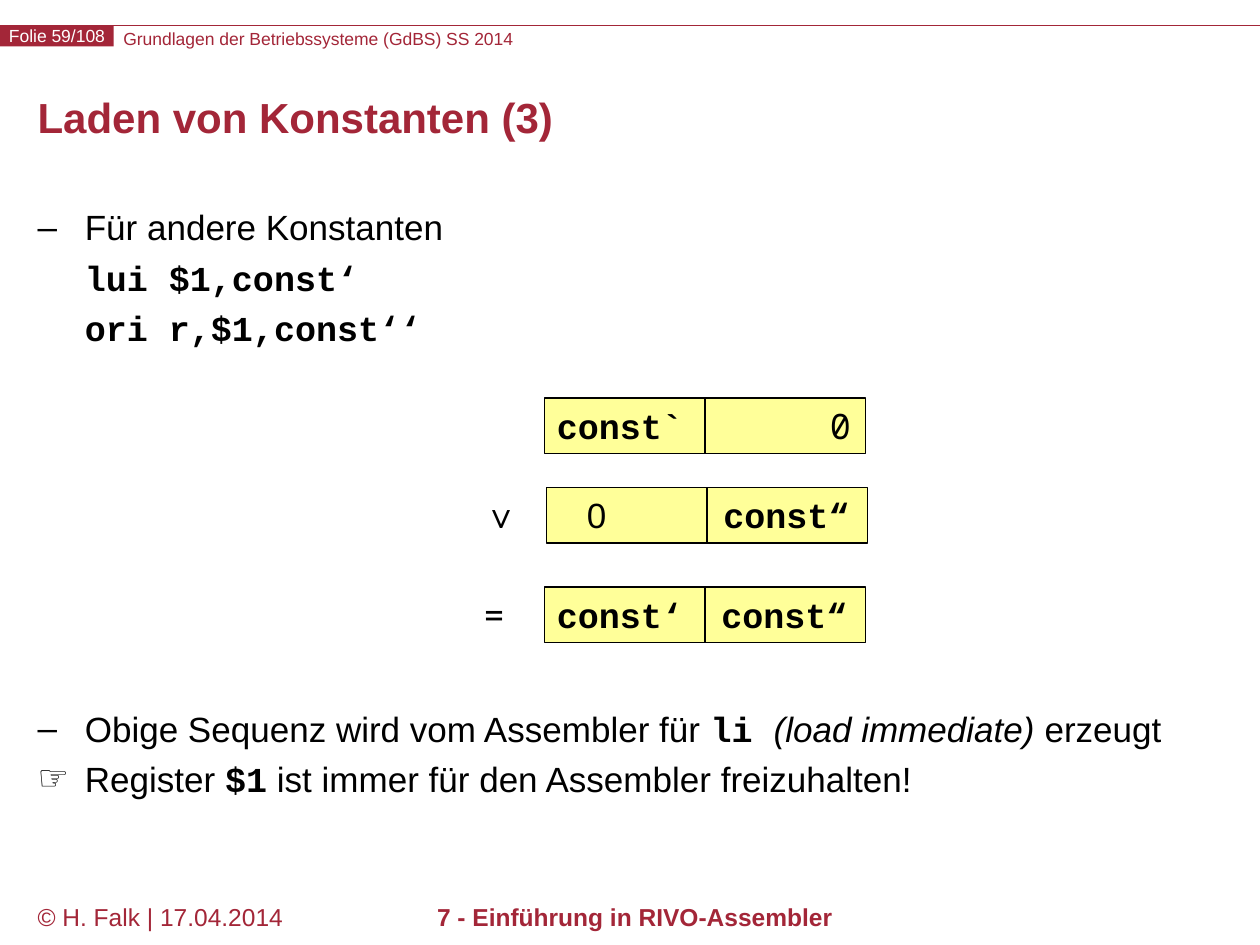
from pptx import Presentation
from pptx.dml.color import RGBColor
from pptx.enum.shapes import MSO_CONNECTOR, MSO_SHAPE
from pptx.enum.text import MSO_ANCHOR, MSO_AUTO_SIZE, PP_ALIGN
from pptx.oxml.ns import qn
from pptx.util import Pt
from lxml.etree import SubElement

RED, BLACK, WHITE, YELLOW = "A32638", "000000", "FFFFFF", "FFFF99"
SANS, CODE, MONO = "Arial", "Courier New", "Noto Sans Mono"


def color(text):
    """Turn a hex string into a colour."""
    return RGBColor.from_string(text)


def add_run(para, text, size, font=SANS, tint=BLACK, bold=False, italic=False):
    """Add one styled run to a paragraph."""
    run = para.add_run()
    run.text = text
    run.font.size = Pt(size)
    run.font.name = font
    run.font.bold = bold
    run.font.italic = italic
    run.font.color.rgb = color(tint)


def add_text(slide, left, top, width, height):
    """Add a wrapping text box and return its frame."""
    box = slide.shapes.add_textbox(Pt(left), Pt(top), Pt(width), Pt(height))
    box.text_frame.word_wrap = True
    return box.text_frame


def add_rect(slide, left, top, width, height, fill, line=None):
    """Add a plain rectangle with text set from the top left."""
    rect = slide.shapes.add_shape(
        MSO_SHAPE.RECTANGLE, Pt(left), Pt(top), Pt(width), Pt(height))
    rect.shadow.inherit = False
    rect.fill.solid()
    rect.fill.fore_color.rgb = color(fill)
    if line:
        rect.line.color.rgb = color(line)
        rect.line.width = Pt(0.75)
    else:
        rect.line.fill.background()
    rect.text_frame.vertical_anchor = MSO_ANCHOR.TOP
    rect.text_frame.paragraphs[0].alignment = PP_ALIGN.LEFT
    return rect


def add_line(slide, start, end, tint):
    """Add a thin straight line without shadow."""
    line = slide.shapes.add_connector(
        MSO_CONNECTOR.STRAIGHT, *(Pt(v) for v in start + end))
    line.line.color.rgb = color(tint)
    line.line.width = Pt(0.75)
    SubElement(line._element.spPr, qn("a:effectLst"))
    return line


def set_lead(para):
    """Put half a line of space before a paragraph."""
    lead = SubElement(para._p.get_or_add_pPr(), qn("a:spcBef"))
    SubElement(lead, qn("a:spcPct"), val="50000")


def set_tabs(para, tabs):
    """Give a paragraph its tab stops as pairs of place and alignment."""
    stops = SubElement(para._p.get_or_add_pPr(), qn("a:tabLst"))
    for pos, side in tabs:
        SubElement(stops, qn("a:tab"), pos=str(Pt(pos)), algn=side)


def set_bullet(para, mark):
    """Give a paragraph a hanging bullet."""
    props = para._p.get_or_add_pPr()
    props.set("marL", str(Pt(27)))
    props.set("indent", str(-Pt(27)))
    SubElement(props, qn("a:buFont"), typeface=SANS)
    SubElement(props, qn("a:buChar"), char=mark)


def add_header(slide, left, top, width):
    """Place the rule, the page tag and the course name."""
    add_line(slide, (left, top), (left + width, top), RED)
    name = add_text(slide, left + 70.5, top + 1.4, 475, 12.2)
    tag = add_rect(slide, left, top, 65, 12.2, RED).text_frame
    tag.word_wrap = False
    for frame in (name, tag):
        frame.margin_left = frame.margin_right = 0
        frame.margin_top = frame.margin_bottom = 0
    add_run(name.paragraphs[0], "Grundlagen der Betriebssysteme (GdBS) SS 2014",
            10, tint=RED)
    para = tag.paragraphs[0]
    para.alignment = PP_ALIGN.CENTER
    set_lead(para)
    add_run(para, "Folie 59/108", 10, tint=WHITE)


def add_title(slide, left, top, width, height):
    """Place the slide title."""
    frame = add_text(slide, left, top, width, height)
    frame.vertical_anchor = MSO_ANCHOR.MIDDLE
    para = frame.paragraphs[0]
    para.line_spacing = Pt(24)
    add_run(para, "Laden von Konstanten (3)", 24, tint=RED, bold=True)


def add_body(slide, left, top, width, height):
    """Place the bullets, leaving a gap for the register figure."""
    code = {"font": CODE, "bold": True}
    items = [
        ("–", 0, [("Für andere Konstanten", {}), None, ("lui $1,const‘", code),
                  None, ("ori r,$1,const‘‘", code)]),
        ("–", 200, [("Obige Sequenz wird vom Assembler für ", {}), ("li ", code),
                    ("(load immediate)", {"italic": True}), (" erzeugt", {})]),
        ("☞", 0, [("Register ", {}), ("$1", code),
                  (" ist immer für den Assembler freizuhalten!", {})]),
    ]
    frame = add_text(slide, left, top, width, height)
    for index, (mark, gap, parts) in enumerate(items):
        para = frame.add_paragraph() if index else frame.paragraphs[0]
        para.line_spacing = 1.2
        para.space_before = Pt(gap)
        set_bullet(para, mark)
        for part in parts:
            if part:
                add_run(para, part[0], 20, **part[1])
            else:
                para.add_line_break()


def add_word(slide, left, top, runs, tabs):
    """Place one register word split into two halves."""
    rect = add_rect(slide, left, top, 183.6, 31.7, YELLOW, BLACK)
    rect.text_frame.auto_size = MSO_AUTO_SIZE.SHAPE_TO_FIT_TEXT
    para = rect.text_frame.paragraphs[0]
    set_lead(para)
    set_tabs(para, tabs)
    for text, font, bold in runs:
        add_run(para, text, 20, font, bold=bold)
    split = add_line(slide, (left, top), (left, top), BLACK)
    split.begin_connect(rect, 0)
    split.end_connect(rect, 2)


def add_sign(slide, left, top, text, font, bold):
    """Place an operator beside a register word."""
    frame = add_text(slide, left, top, 41.8, 31.7)
    frame.auto_size = MSO_AUTO_SIZE.SHAPE_TO_FIT_TEXT
    set_lead(frame.paragraphs[0])
    add_run(frame.paragraphs[0], text, 20, font, bold=bold)


def add_figure(slide, left, top):
    """Place the three register words and their operators."""
    word = left + 41.8
    add_word(slide, word, top, [("const`", CODE, True), ("\t0", MONO, False)],
             [(168, "r")])
    add_word(slide, word + 1.2, top + 51.1,
             [("\t0\t", SANS, False), ("const“", CODE, True)],
             [(16, "l"), (94, "l")])
    add_word(slide, word, top + 108, [("const‘\tconst“", CODE, True)],
             [(94, "l")])
    add_sign(slide, left, top + 51.1, "∨", SANS, True)
    add_sign(slide, left, top + 108, "=", MONO, False)


def add_footer(slide, left, top):
    """Place the author with date and the chapter name."""
    date = add_text(slide, left, top, 158.4, 28).paragraphs[0]
    add_run(date, "© H. Falk | 17.04.2014", 14, tint=RED)
    part = add_text(slide, left + 130.3, top, 436.3, 28).paragraphs[0]
    part.alignment = PP_ALIGN.CENTER
    add_run(part, "7 - Einführung in RIVO-Assembler", 14, tint=RED, bold=True)


def main():
    """Build the slide and save it."""
    deck = Presentation()
    deck.slide_width, deck.slide_height = Pt(720), Pt(540)
    slide = deck.slides.add_slide(deck.slide_layouts[6])
    add_header(slide, 0, 14.4, 720)
    add_footer(slide, 14.4, 512)
    add_title(slide, 14.4, 43.2, 692, 51.8)
    add_body(slide, 14.4, 109.4, 692, 393)
    add_figure(slide, 269.3, 227.5)
    deck.save("out.pptx")


if __name__ == "__main__":
    main()
